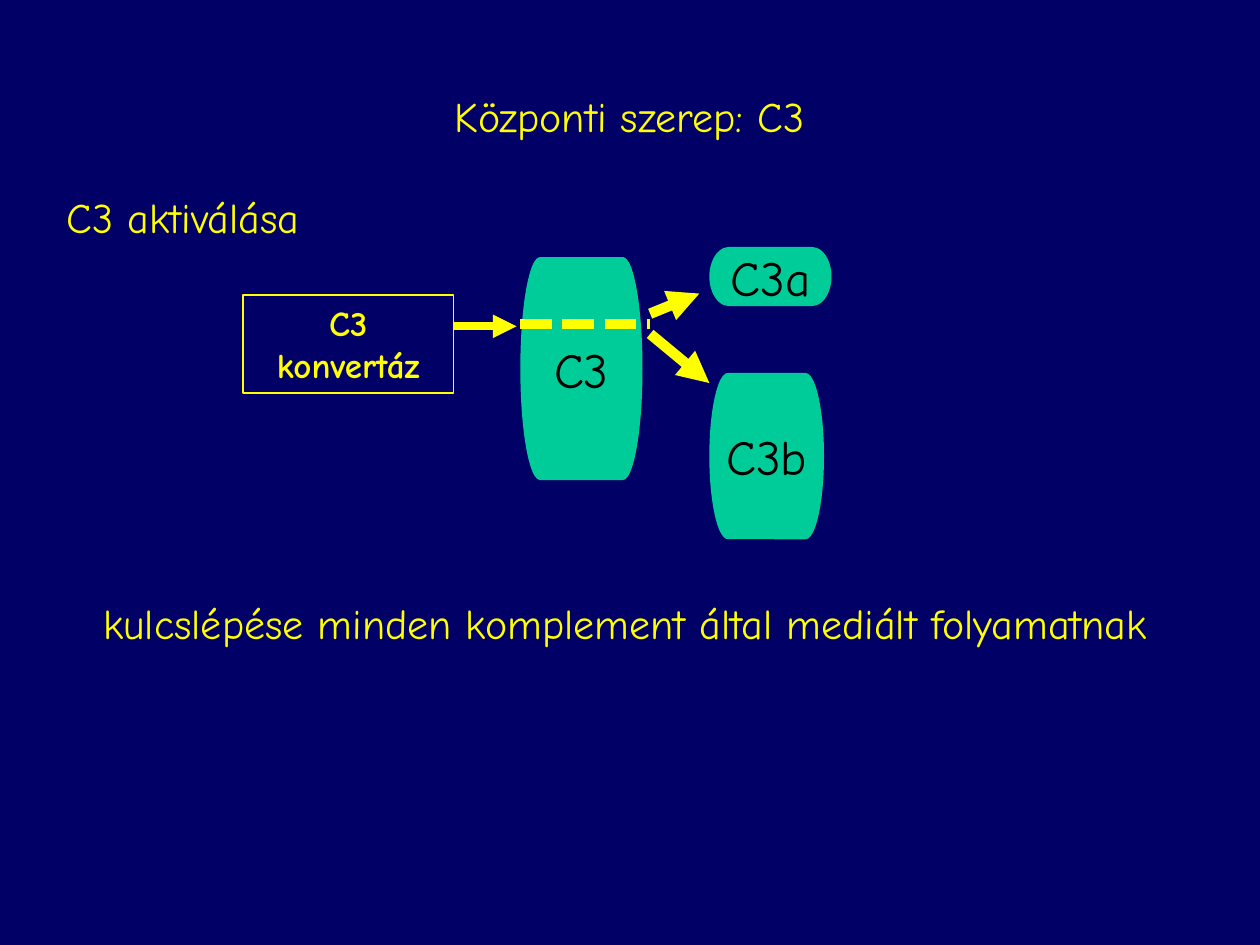
from lxml.etree import SubElement
from pptx import Presentation
from pptx.dml.color import RGBColor
from pptx.enum.dml import MSO_LINE
from pptx.enum.shapes import MSO_CONNECTOR, MSO_SHAPE
from pptx.enum.text import MSO_ANCHOR, PP_ALIGN
from pptx.oxml.ns import qn
from pptx.util import Inches, Pt

# Content: positions as shares of the slide's width and height
W, H = 10, 7.5
FONT = "Comic Neue"
COLORS = {"back": "000066", "accent": "FFFF00", "protein": "00CC99", "label": "000000"}
LEFT, CENTER = PP_ALIGN.LEFT, PP_ALIGN.CENTER

TEXTS = [
    ("Központi szerep: C3", CENTER, (0.042, 0.0893, 0.915, 0.0667)),
    ("C3 aktiválása", LEFT, (0.043, 0.196, 0.317, 0.0667)),
    ("kulcslépése minden komplement által mediált folyamatnak", CENTER,
     (0.051, 0.6253, 0.89, 0.12)),
]
PROTEINS = [
    ("C3", (0.413, 0.272, 0.097, 0.236)),
    ("C3b", (0.563, 0.3947, 0.091, 0.176)),
    ("C3a", (0.563, 0.2613, 0.097, 0.0627)),
]
ENZYME = (["C3", "konvertáz"], (0.193, 0.312, 0.167, 0.104))
# start, end, width in points, is an arrow
LINES = [
    ((0.516, 0.332), (0.555, 0.3107), 6, True),
    ((0.516, 0.3533), (0.563, 0.4053), 6, True),
    ((0.36, 0.3453), (0.41, 0.3453), 4.5, True),
    ((0.413, 0.3427), (0.516, 0.3427), 6, False),
]


def color(name):
    return RGBColor.from_string(COLORS[name])


def place(shares):
    return [Inches(round(v * side, 2)) for v, side in zip(shares, (W, H, W, H))]


def write(sp, lines, size, tint, align=CENTER, anchor=MSO_ANCHOR.TOP, wrap=True, bold=False):
    tf = sp.text_frame
    tf.word_wrap = wrap
    tf.vertical_anchor = anchor
    p = tf.paragraphs[0]
    p.alignment = align
    for i, line in enumerate(lines):
        if i:
            p.add_line_break()
        r = p.add_run()
        r.text = line
        r.font.name, r.font.size, r.font.bold = FONT, Pt(size), bold
        r.font.color.rgb = color(tint)


prs = Presentation()
prs.slide_width, prs.slide_height = Inches(W), Inches(H)
s = prs.slides.add_slide(prs.slide_layouts[6])
s.background.fill.solid()
s.background.fill.fore_color.rgb = color("back")

# Headings and conclusion
for text, align, shares in TEXTS:
    write(s.shapes.add_textbox(*place(shares)), [text], 24, "accent", align)

# Complement proteins
for text, shares in PROTEINS:
    sp = s.shapes.add_shape(MSO_SHAPE.FLOWCHART_TERMINATOR, *place(shares))
    sp.shadow.inherit = False
    sp.fill.solid()
    sp.fill.fore_color.rgb = color("protein")
    sp.line.fill.background()
    write(sp, [text], 28, "label", anchor=MSO_ANCHOR.MIDDLE, wrap=False)

# Convertase box
lines, shares = ENZYME
sp = s.shapes.add_shape(MSO_SHAPE.RECTANGLE, *place(shares))
sp.shadow.inherit = False
sp.fill.background()
sp.line.color.rgb = color("accent")
sp.line.width = Pt(0.75)
write(sp, lines, 20, "accent", bold=True)

# Reaction arrows and the dotted cleavage line
for start, end, width, arrow in LINES:
    cx = s.shapes.add_connector(MSO_CONNECTOR.STRAIGHT, *place(start + end))
    cx.line.color.rgb = color("accent")
    cx.line.width = Pt(width)
    if arrow:
        SubElement(cx.line._get_or_add_ln(), qn("a:tailEnd"), type="triangle")
    else:
        cx.line.dash_style = MSO_LINE.SQUARE_DOT
    SubElement(cx._element.spPr, qn("a:effectLst"))

prs.save("out.pptx")
